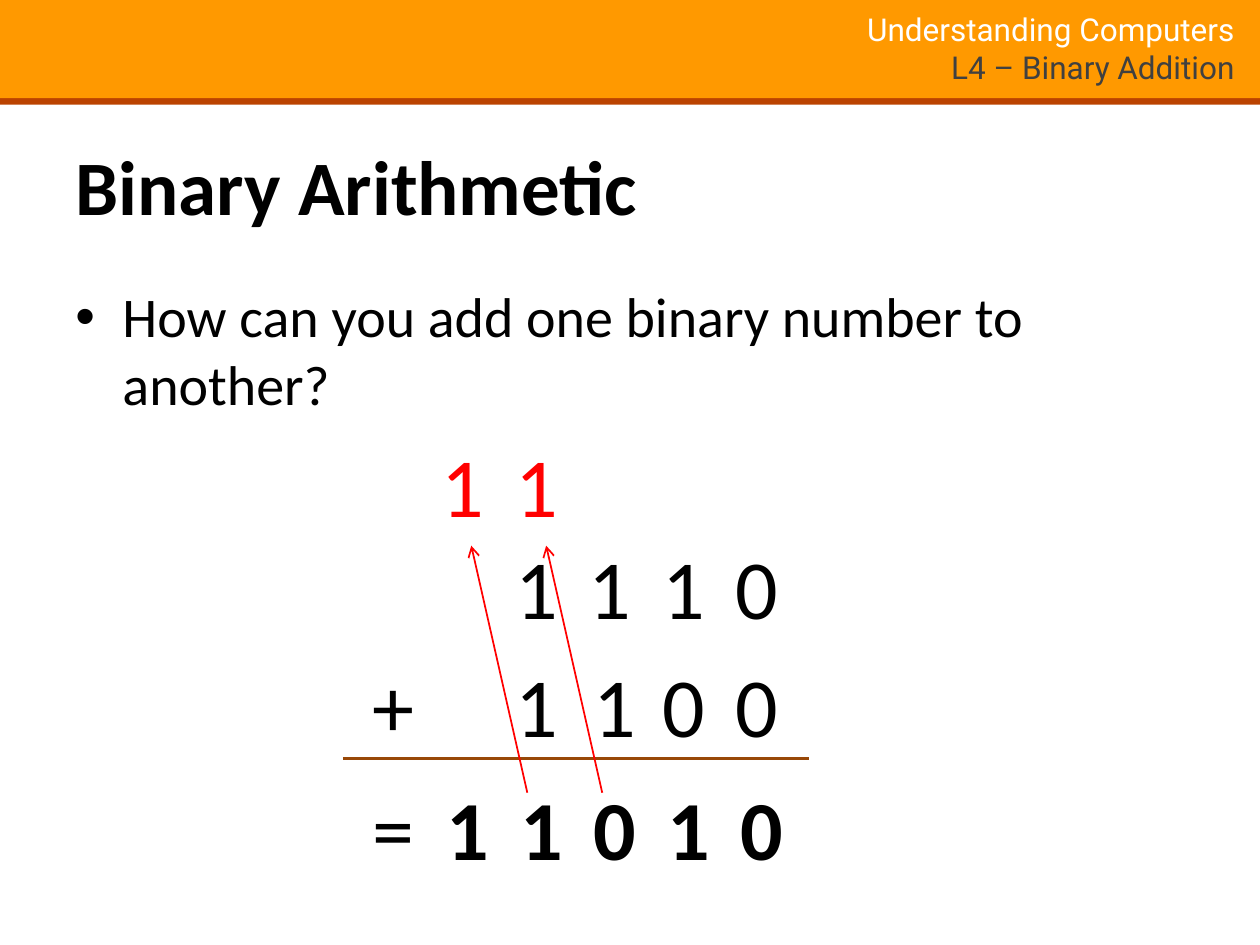
from pptx import Presentation
from pptx.dml.color import RGBColor
from pptx.enum.shapes import MSO_CONNECTOR, MSO_SHAPE
from pptx.enum.text import MSO_ANCHOR, MSO_AUTO_SIZE, PP_ALIGN
from pptx.oxml.ns import qn
from pptx.util import Cm, Pt
from lxml import etree

BLACK = RGBColor(0x00, 0x00, 0x00)
WHITE = RGBColor(0xFF, 0xFF, 0xFF)
GREY = RGBColor(0x40, 0x40, 0x40)
ORANGE = RGBColor(0xFF, 0x99, 0x00)
RUST = RGBColor(0xBB, 0x43, 0x01)
BROWN = RGBColor(0x98, 0x48, 0x07)
RED = RGBColor(0xFF, 0x00, 0x00)

RECTANGLE = MSO_SHAPE.RECTANGLE
STRAIGHT = MSO_CONNECTOR.STRAIGHT
TOP = MSO_ANCHOR.TOP
LEFT, CENTER, RIGHT = PP_ALIGN.LEFT, PP_ALIGN.CENTER, PP_ALIGN.RIGHT
NO_AUTOFIT, FIT_SHAPE = MSO_AUTO_SIZE.NONE, MSO_AUTO_SIZE.SHAPE_TO_FIT_TEXT

SLIDE_WIDTH, SLIDE_HEIGHT = 25.4, 19.05
FIRST_COLUMN, COLUMN_PITCH = 9.34, 1.48
CARRY_TOP, FIRST_TOP, SECOND_TOP, SUM_TOP = 8.61, 10.67, 13.06, 15.52
DIGIT_SIZE, COMPACT_SIZE, CARRY_SIZE = (1.48, 2.46), (1.16, 1.98), (1.6, 2.67)
SIGN_SIZE, SIGN_CENTER = (1.32, 2.46), 7.92


def set_font(font, size, color, bold=False, name="Calibri"):
    font.name = name
    font.size = Pt(size)
    font.bold = bold
    font.color.rgb = color


def add_bar(slide, top, height, color):
    bar = slide.shapes.add_shape(RECTANGLE, Cm(0), Cm(top), Cm(SLIDE_WIDTH), Cm(height))
    bar.shadow.inherit = False
    bar.fill.solid()
    bar.fill.fore_color.rgb = color
    bar.line.fill.background()


def add_text_box(slide, left, top, width, height, wrap=True):
    text_frame = slide.shapes.add_textbox(
        Cm(left), Cm(top), Cm(width), Cm(height)).text_frame
    text_frame.word_wrap = wrap
    return text_frame


def add_header(slide):
    add_bar(slide, 1.96, 0.15, RUST)
    add_bar(slide, 0, 1.98, ORANGE)
    paragraph = add_text_box(slide, 12.67, 0.08, 12.47, 1.75).paragraphs[0]
    paragraph.alignment = RIGHT
    course = paragraph.add_run()
    course.text = "Understanding Computers"
    set_font(course.font, 18, WHITE, name="Roboto")
    paragraph.add_line_break()
    lesson = paragraph.add_run()
    lesson.text = "L4 – Binary Addition"
    set_font(lesson.font, 18, GREY, name="Roboto")


def format_title(slide, text):
    title = slide.shapes.title
    title.left, title.top, title.width, title.height = Cm(1.27), Cm(2.67), Cm(22.86), Cm(3.18)
    text_frame = title.text_frame
    text_frame.text = text
    text_frame.auto_size = NO_AUTOFIT
    text_frame.vertical_anchor = TOP
    paragraph = text_frame.paragraphs[0]
    paragraph.alignment = LEFT
    set_font(paragraph.font, 44, BLACK, bold=True)


def add_bullet(slide, text):
    paragraph = add_text_box(slide, 1.27, 5.56, 22.86, 3.18).paragraphs[0]
    paragraph.text = text
    properties = paragraph._p.get_or_add_pPr()
    properties.set("marL", str(Cm(0.95)))
    properties.set("indent", str(Cm(-0.95)))
    etree.SubElement(properties, qn("a:buFont")).set("typeface", "Arial")
    etree.SubElement(properties, qn("a:buChar")).set("char", "•")
    set_font(paragraph.font, 32, BLACK)


def add_symbol(slide, text, center, top, size, color=BLACK, bold=False):
    width, height = size
    text_frame = add_text_box(slide, center - width / 2, top, width, height, wrap=False)
    text_frame.auto_size = FIT_SHAPE
    paragraph = text_frame.paragraphs[0]
    paragraph.text = text
    paragraph.alignment = CENTER
    set_font(paragraph.font, 48, color, bold)


def add_digits(slide, columns, top, size, color=BLACK, bold=False):
    for column, digit in columns.items():
        center = FIRST_COLUMN + column * COLUMN_PITCH
        add_symbol(slide, digit, center, top, size, color, bold)


def add_line(slide, start, end, color, width, arrow=False):
    line = slide.shapes.add_connector(STRAIGHT, *map(Cm, start + end))
    line.line.color.rgb = color
    line.line.width = Pt(width)
    if arrow:
        etree.SubElement(line.line._get_or_add_ln(), qn("a:tailEnd")).set("type", "arrow")
    etree.SubElement(line._element.spPr, qn("a:effectLst"))


def add_sum(slide):
    add_digits(slide, {1: "1", 2: "1", 3: "1", 4: "0"}, FIRST_TOP, DIGIT_SIZE)
    add_digits(slide, {1: "1", 3: "0", 4: "0"}, SECOND_TOP, DIGIT_SIZE)
    add_digits(slide, {2: "1"}, SECOND_TOP, COMPACT_SIZE)
    add_digits(slide, dict(enumerate("11010")), SUM_TOP, COMPACT_SIZE, bold=True)
    add_symbol(slide, "+", SIGN_CENTER, SECOND_TOP, SIGN_SIZE)
    add_symbol(slide, "=", SIGN_CENTER, SUM_TOP, SIGN_SIZE)
    add_line(slide, (6.91, 15.29), (16.31, 15.29), BROWN, 2.25)
    add_digits(slide, {0: "1", 1: "1"}, CARRY_TOP, CARRY_SIZE, RED)
    for start_x in (12.14, 10.63):
        add_line(slide, (start_x, 15.98), (start_x - 1.13, 11), RED, 1, arrow=True)


def main():
    presentation = Presentation()
    presentation.slide_width = Cm(SLIDE_WIDTH)
    presentation.slide_height = Cm(SLIDE_HEIGHT)
    slide = presentation.slides.add_slide(presentation.slide_layouts[5])
    add_header(slide)
    format_title(slide, "Binary Arithmetic")
    add_bullet(slide, "How can you add one binary number to another?")
    add_sum(slide)
    presentation.save("out.pptx")


if __name__ == "__main__":
    main()
